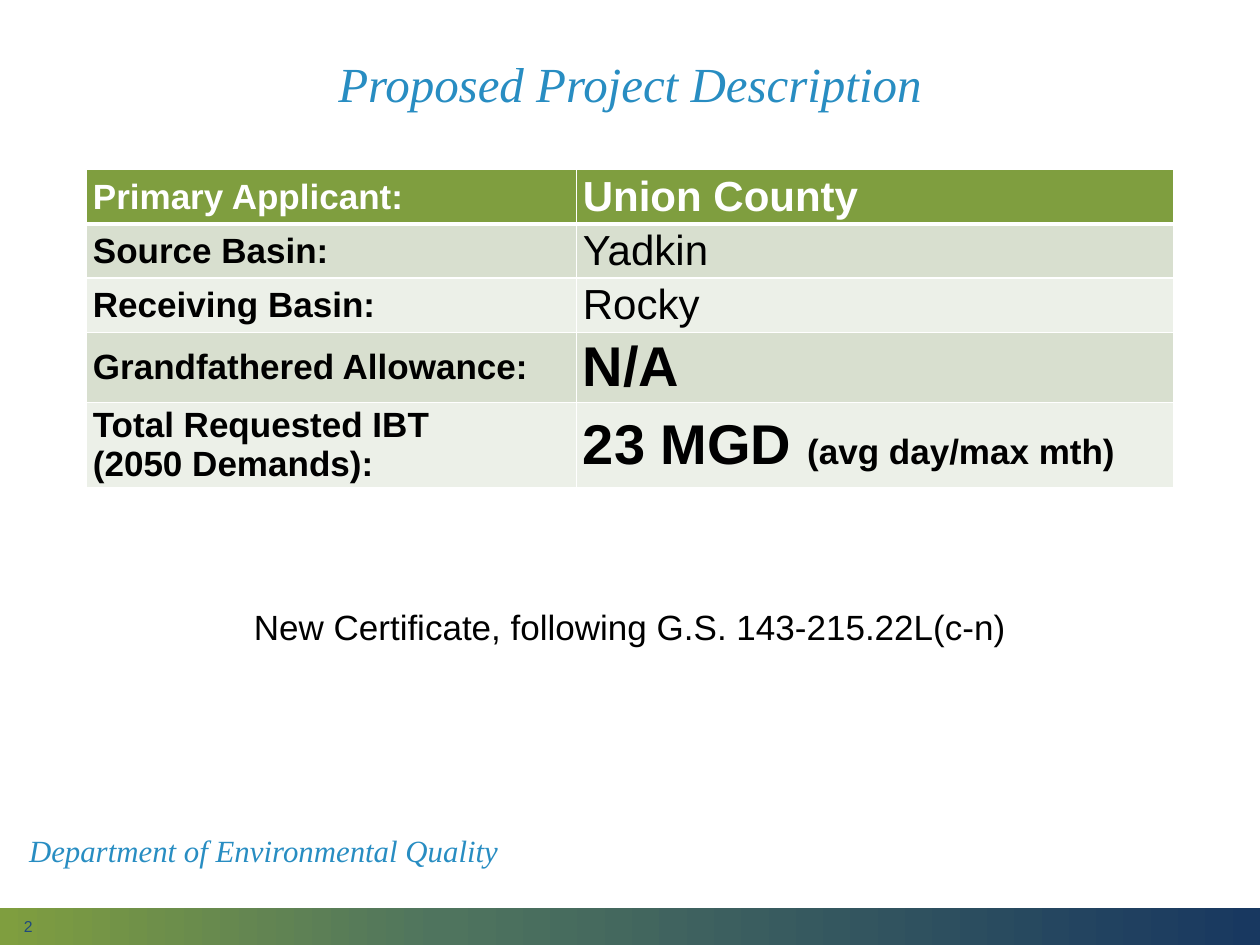
import copy
from typing import NamedTuple

import pptx
import pptx.dml.color
import pptx.enum.shapes
import pptx.enum.text
import pptx.oxml
import pptx.oxml.ns
import pptx.util

Pt = pptx.util.Pt
PP_ALIGN = pptx.enum.text.PP_ALIGN
MIDDLE = pptx.enum.text.MSO_ANCHOR.MIDDLE
TOP = pptx.enum.text.MSO_ANCHOR.TOP

GREEN, BLUE, NAVY = "7F9E3F", "288DC2", "183860"
BLACK, WHITE = "000000", "FFFFFF"
BANDS = ("D8DFCF", "ECF0E8")
SANS, SERIF = "Arial", "Times New Roman"


class Run(NamedTuple):
    text: str
    size: float
    bold: bool = False
    italic: bool = False
    font: str = SANS
    color: str = BLACK


class Box(NamedTuple):
    left: float
    top: float
    width: float
    height: float


class TextBox(NamedTuple):
    box: Box
    run: Run
    align: PP_ALIGN = PP_ALIGN.LEFT
    anchor: pptx.enum.text.MSO_ANCHOR = MIDDLE
    spacing: float = 0.9


class Row(NamedTuple):
    height: float
    labels: list[str]
    values: list[Run]


TITLE = TextBox(Box(49.5, 8, 621, 83.5),
                Run("Proposed Project Description", 28, italic=True, font=SERIF, color=BLUE),
                PP_ALIGN.CENTER)
TEXT_BOXES = [
    TextBox(Box(6.5, 523.5, 162, 11), Run("2", 9, color="1F497D"), spacing=1),
    TextBox(Box(9.5, 472.5, 295, 29.5),
            Run("Department of Environmental Quality", 17.6, italic=True, font=SERIF, color=BLUE)),
    TextBox(Box(49.5, 345, 621, 43),
            Run("New Certificate, following G.S. 143-215.22L(c-n)", 20),
            PP_ALIGN.CENTER, TOP),
]
ROWS = [
    Row(31, ["Primary Applicant:"], [Run("Union County", 24, True)]),
    Row(31, ["Source Basin:"], [Run("Yadkin", 24)]),
    Row(31, ["Receiving Basin:"], [Run("Rocky", 24)]),
    Row(40, ["Grandfathered Allowance:"], [Run("N/A", 32, True)]),
    Row(49, ["Total Requested IBT", "(2050 Demands):"],
        [Run("23 MGD ", 32, True), Run("(avg day/max mth)", 20, True)]),
]


def rgb(color: str) -> pptx.dml.color.RGBColor:
    return pptx.dml.color.RGBColor.from_string(color)


def points(box: Box) -> list[pptx.util.Length]:
    return [Pt(v) for v in box]


def add_run(p, run: Run) -> None:
    r = p.add_run()
    r.text = run.text
    f = r.font
    f.name, f.size, f.bold, f.italic = run.font, Pt(run.size), run.bold, run.italic
    f.color.rgb = rgb(run.color)


def fill_text(sp, text: TextBox) -> None:
    tf = sp.text_frame
    tf.word_wrap = True
    tf.vertical_anchor = text.anchor
    tf.margin_left = tf.margin_right = Pt(7.2)
    tf.margin_top = tf.margin_bottom = Pt(3.6)
    p = tf.paragraphs[0]
    p.alignment = text.align
    p.line_spacing = text.spacing
    add_run(p, text.run)


def add_title(s, text: TextBox) -> None:
    sp = s.shapes.title
    sp.left, sp.top, sp.width, sp.height = points(text.box)
    fill_text(sp, text)


def add_footer_bar(s, box: Box) -> None:
    sp = s.shapes.add_shape(pptx.enum.shapes.MSO_SHAPE.RECTANGLE, *points(box))
    sp.shadow.inherit = False
    sp.line.fill.background()
    sp.fill.gradient()
    sp.fill.gradient_angle = 0
    stops = sp._element.spPr.find(".//" + pptx.oxml.ns.qn("a:gsLst"))
    stops.append(copy.deepcopy(stops[0]))
    colors = [(0, GREEN), (0.35, "4F745E"), (1, NAVY)]
    for stop, (position, color) in zip(sp.fill.gradient_stops, colors):
        stop.position = position
        stop.color.rgb = rgb(color)


def style_cell(cell, fill: str, top: float, bottom: float) -> None:
    cell.vertical_anchor = MIDDLE
    cell.margin_left = cell.margin_right = Pt(3.6)
    cell.margin_top = cell.margin_bottom = Pt(2)
    tcPr = cell._tc.get_or_add_tcPr()
    for side, width in (("L", 1), ("R", 1), ("T", top), ("B", bottom)):
        tcPr.append(pptx.oxml.parse_xml(
            f'<a:ln{side} {pptx.oxml.ns.nsdecls("a")} w="{Pt(width)}"><a:solidFill>'
            f'<a:srgbClr val="{WHITE}"/></a:solidFill></a:ln{side}>'))
    cell.fill.solid()
    cell.fill.fore_color.rgb = rgb(fill)


def add_project_table(s, left: float, top: float, widths: list[float], rows: list[Row]) -> None:
    box = Box(left, top, sum(widths), sum(row.height for row in rows))
    table = s.shapes.add_table(len(rows), len(widths), *points(box)).table
    for column, width in zip(table.columns, widths):
        column.width = Pt(width)
    for i, row in enumerate(rows):
        table.rows[i].height = Pt(row.height)
        fill = BANDS[(i - 1) % 2] if i else GREEN
        color = BLACK if i else WHITE
        paragraphs = ([[Run(label, 20, True)] for label in row.labels], [row.values])
        for cell, lines in zip(table.rows[i].cells, paragraphs):
            style_cell(cell, fill, 3 if i == 1 else 1, 1 if i else 3)
            tf = cell.text_frame
            for j, runs in enumerate(lines):
                p = tf.add_paragraph() if j else tf.paragraphs[0]
                for run in runs:
                    add_run(p, run._replace(color=color))


def main() -> None:
    prs = pptx.Presentation()
    prs.slide_width, prs.slide_height = Pt(720), Pt(540)
    s = prs.slides.add_slide(prs.slide_layouts[5])
    add_footer_bar(s, Box(0, 519, 720, 21))
    add_title(s, TITLE)
    add_project_table(s, 49.5, 97, [280, 341], ROWS)
    for text in TEXT_BOXES:
        fill_text(s.shapes.add_textbox(*points(text.box)), text)
    prs.save("out.pptx")


if __name__ == "__main__":
    main()
